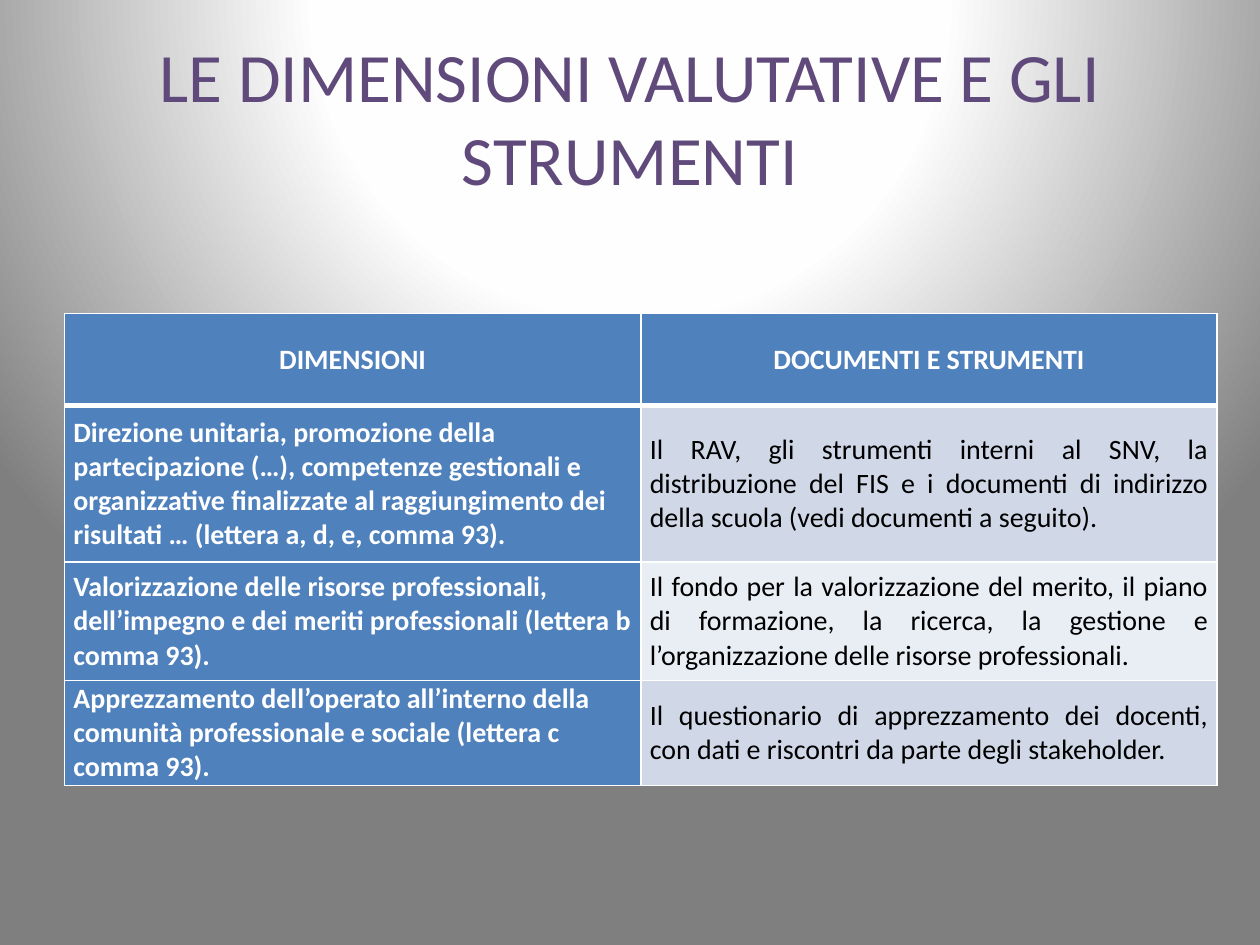
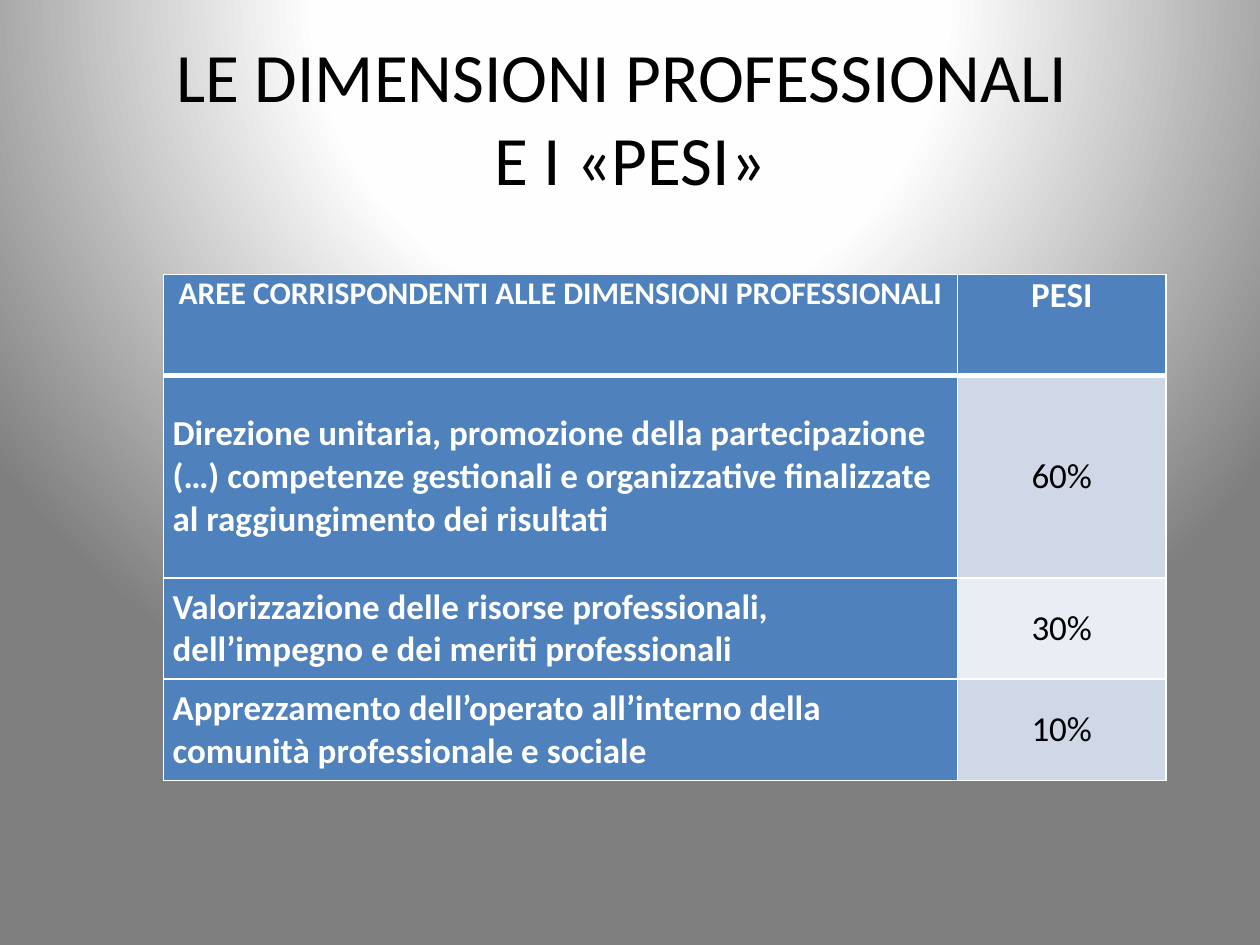
from lxml import etree
from pptx import Presentation
from pptx.dml.color import RGBColor
from pptx.enum.text import MSO_ANCHOR, MSO_AUTO_SIZE, PP_ALIGN
from pptx.oxml import parse_xml
from pptx.oxml.ns import qn
from pptx.util import Cm, Pt

LEFT, CENTER, JUSTIFY = PP_ALIGN.LEFT, PP_ALIGN.CENTER, PP_ALIGN.JUSTIFY
TOP, MIDDLE = MSO_ANCHOR.TOP, MSO_ANCHOR.MIDDLE
NO_AUTOFIT = MSO_AUTO_SIZE.NONE

FONT = "Calibri"
WHITE, BLACK, PURPLE = "FFFFFF", "000000", "604A7B"
BLUE, BANDS = "4F81BD", ("D0D8E8", "E9EDF4")
GRADIENT_STOPS = ((0, WHITE), (40, "FEFEFE"), (100, "7F7F7F"))
TITLE_BOX = (1.27, 0.76, 22.86, 3.18)
TITLE_ONLY = 5

TOOLS_ROWS = (
    ("DIMENSIONI", "DOCUMENTI E STRUMENTI"),
    ("Direzione unitaria, promozione della partecipazione (…), competenze gestionali e "
     "organizzative finalizzate al raggiungimento dei risultati … (lettera a, d, e, comma 93).",
     "Il RAV, gli strumenti interni al SNV, la distribuzione del FIS e i documenti di "
     "indirizzo della scuola (vedi documenti a seguito)."),
    ("Valorizzazione delle risorse professionali, dell’impegno e dei meriti professionali "
     "(lettera b comma 93).",
     "Il fondo per la valorizzazione del merito, il piano di formazione, la ricerca, la "
     "gestione e l’organizzazione delle risorse professionali."),
    ("Apprezzamento dell’operato all’interno della comunità professionale e sociale "
     "(lettera c comma 93).",
     "Il questionario di apprezzamento dei docenti, con dati e riscontri da parte degli "
     "stakeholder."),
)
WEIGHTS_ROWS = (
    ("AREE CORRISPONDENTI ALLE DIMENSIONI PROFESSIONALI", "PESI"),
    ("Direzione unitaria, promozione della partecipazione (…) competenze gestionali e "
     "organizzative finalizzate al raggiungimento dei risultati", "60%"),
    ("Valorizzazione delle risorse professionali, dell’impegno e dei meriti professionali",
     "30%"),
    ("Apprezzamento dell’operato all’interno della comunità professionale e sociale", "10%"),
)


def color(hex_text):
    return RGBColor.from_string(hex_text)


def write_text(text_frame, text, size, font_color=BLACK, bold=False, align=LEFT):
    paragraph = text_frame.paragraphs[0]
    paragraph.text = text
    paragraph.alignment = align
    for run in paragraph.runs:
        run.font.name = FONT
        run.font.size = Pt(size)
        run.font.bold = bold
        run.font.color.rgb = color(font_color)


def set_master_background(master):
    master.background.fill.solid()
    solid_fill = master.element.xpath(".//p:bgPr/a:solidFill")[0]
    stops = "".join(
        f'<a:gs pos="{position * 1000}"><a:srgbClr val="{stop}"/></a:gs>'
        for position, stop in GRADIENT_STOPS)
    gradient = parse_xml(
        '<a:gradFill xmlns:a="http://schemas.openxmlformats.org/drawingml/2006/main" '
        f'rotWithShape="1"><a:gsLst>{stops}</a:gsLst><a:path path="circle">'
        '<a:fillToRect l="50000" t="-80000" r="50000" b="180000"/></a:path></a:gradFill>')
    solid_fill.getparent().replace(solid_fill, gradient)


def set_borders(cell, widths):
    properties = cell._tc.get_or_add_tcPr()
    for side, width in zip("LRTB", widths):
        line = etree.SubElement(properties, qn(f"a:ln{side}"), w=str(Pt(width)))
        fill = etree.SubElement(line, qn("a:solidFill"))
        etree.SubElement(fill, qn("a:srgbClr"), val=WHITE)


def format_cell(cell, row, column):
    cell.margin_left = cell.margin_right = Cm(0.18)
    cell.margin_top = cell.margin_bottom = 0
    set_borders(cell, (1, 1, 3 if row == 1 else 1, 3 if row == 0 else 1))
    cell.fill.solid()
    is_heading = row == 0 or column == 0
    cell.fill.fore_color.rgb = color(BLUE if is_heading else BANDS[(row - 1) % 2])


def add_title(slide, box, text, font_color):
    title = slide.shapes.title
    title.left, title.top, title.width, title.height = map(Cm, box)
    title.text_frame.auto_size = NO_AUTOFIT
    title.text_frame.vertical_anchor = MIDDLE
    write_text(title.text_frame, text, 39.6, font_color=font_color, align=CENTER)


def add_dimension_table(slide, left, top, widths, heights, rows, size,
                        first_size, header_anchor, value_align):
    frame = slide.shapes.add_table(
        len(heights), len(widths), Cm(left), Cm(top), Cm(sum(widths)), Cm(sum(heights)))
    table = frame.table
    for column, width in zip(table.columns, widths):
        column.width = Cm(width)
    for table_row, height in zip(table.rows, heights):
        table_row.height = Cm(height)
    for row, texts in enumerate(rows):
        for column, text in enumerate(texts):
            cell = table.cell(row, column)
            format_cell(cell, row, column)
            is_heading = row == 0 or column == 0
            cell.vertical_anchor = header_anchor if row == 0 else MIDDLE
            write_text(
                cell.text_frame, text,
                first_size if row == column == 0 else size,
                font_color=WHITE if is_heading else BLACK, bold=is_heading,
                align=CENTER if row == 0 else value_align if column else LEFT)


def add_table_slide(presentation, title, title_color, **table_options):
    slide = presentation.slides.add_slide(presentation.slide_layouts[TITLE_ONLY])
    add_title(slide, TITLE_BOX, title, title_color)
    add_dimension_table(slide, **table_options)


def main():
    presentation = Presentation()
    presentation.slide_width, presentation.slide_height = Cm(25.4), Cm(19.05)
    set_master_background(presentation.slide_master)
    add_table_slide(
        presentation, "LE DIMENSIONI VALUTATIVE E GLI STRUMENTI", PURPLE,
        left=1.3, top=6.32, widths=(11.62, 11.62), heights=(1.86, 3.15, 2.39, 2.11),
        rows=TOOLS_ROWS, size=16, first_size=16, header_anchor=MIDDLE, value_align=JUSTIFY)
    add_table_slide(
        presentation, "LE DIMENSIONI PROFESSIONALI \vE I «PESI»", BLACK,
        left=3.3, top=5.53, widths=(16, 4.21), heights=(2.04, 4.08, 2.04, 2.04),
        rows=WEIGHTS_ROWS, size=20, first_size=18, header_anchor=TOP, value_align=CENTER)
    presentation.save("out.pptx")


if __name__ == "__main__":
    main()
